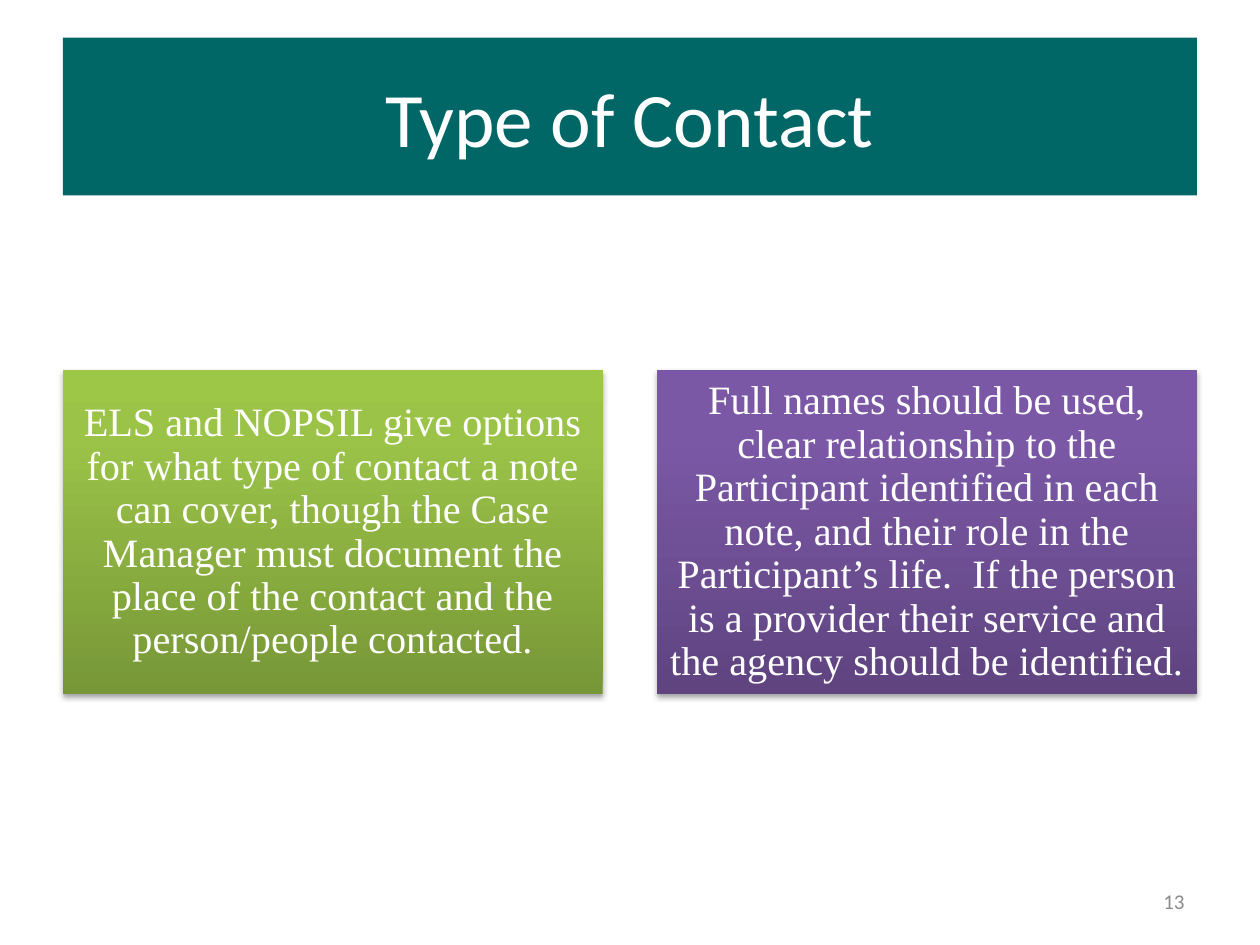
from copy import deepcopy
from dataclasses import dataclass

from lxml import etree
from pptx import Presentation
from pptx.dml.color import RGBColor
from pptx.enum.shapes import MSO_SHAPE
from pptx.enum.text import MSO_ANCHOR, PP_ALIGN
from pptx.oxml.ns import qn
from pptx.util import Cm, Pt

RECTANGLE = MSO_SHAPE.RECTANGLE
MIDDLE = MSO_ANCHOR.MIDDLE
CENTER = PP_ALIGN.CENTER
RIGHT = PP_ALIGN.RIGHT


@dataclass(frozen=True)
class Theme:
    heading_font: str = "Calibri"
    body_font: str = "Times New Roman"
    title_size: int = 44
    body_size: int = 23
    number_size: int = 12
    white: str = "FFFFFF"
    teal: str = "006666"
    grey: str = "8C8C8C"
    green: tuple = ("779737", "9BC348", "9DC746")
    purple: tuple = ("5F4480", "7B58A6", "7C57A8")
    stops: tuple = (0, 0.8, 1)


THEME = Theme()

PANELS = (
    (
        "ELS and NOPSIL give options for what type of contact a note can cover, "
        "though the Case Manager must document the place of the contact and the "
        "person/people contacted.",
        THEME.green,
    ),
    (
        "Full names should be used, clear relationship to the Participant "
        "identified in each note, and their role in the Participant’s life.  "
        "If the person is a provider their service and the agency should be "
        "identified.",
        THEME.purple,
    ),
)


def write_text(shape, text, font_name, size, color, alignment):
    frame = shape.text_frame
    frame.word_wrap = True
    frame.vertical_anchor = MIDDLE
    paragraph = frame.paragraphs[0]
    paragraph.text = text
    paragraph.alignment = alignment
    paragraph.font.name = font_name
    paragraph.font.size = Pt(size)
    paragraph.font.color.rgb = RGBColor.from_string(color)
    return frame, paragraph


def add_rectangle(slide, left, top, width, height):
    shape = slide.shapes.add_shape(
        RECTANGLE, Cm(left), Cm(top), Cm(width), Cm(height)
    )
    shape.shadow.inherit = False
    shape.line.fill.background()
    return shape


def fill_gradient(shape, colors):
    shape.fill.gradient()
    shape.fill.gradient_angle = 90
    stop_list = shape.element.spPr.find(qn("a:gradFill")).find(qn("a:gsLst"))
    stop_list.append(deepcopy(stop_list[-1]))
    for stop, position, color in zip(
        shape.fill.gradient_stops, THEME.stops, colors
    ):
        stop.position = position
        stop.color.rgb = RGBColor.from_string(color)


def add_soft_shadow(shape):
    effects = shape.element.spPr.find(qn("a:effectLst"))
    shadow = etree.SubElement(
        effects,
        qn("a:outerShdw"),
        blurRad=str(Pt(3.1)),
        dist=str(Pt(1.8)),
        dir="5400000",
        rotWithShape="0",
    )
    color = etree.SubElement(shadow, qn("a:srgbClr"), val="000000")
    etree.SubElement(color, qn("a:alpha"), val="35000")


def add_title(slide, left, top, width, height):
    banner = add_rectangle(slide, left, top, width, height)
    banner.fill.solid()
    banner.fill.fore_color.rgb = RGBColor.from_string(THEME.teal)
    write_text(
        banner, "Type of Contact", THEME.heading_font,
        THEME.title_size, THEME.white, CENTER,
    )


def add_panels(slide, left, top, width, height, gap=1.1):
    panel_width = (width - gap * (len(PANELS) - 1)) / len(PANELS)
    for index, (text, colors) in enumerate(PANELS):
        panel = add_rectangle(
            slide, left + index * (panel_width + gap), top, panel_width, height
        )
        fill_gradient(panel, colors)
        add_soft_shadow(panel)
        frame, paragraph = write_text(
            panel, text, THEME.body_font, THEME.body_size, THEME.white, CENTER
        )
        frame.margin_left = frame.margin_right = Cm(0.24)
        frame.margin_top = frame.margin_bottom = Cm(0.24)
        paragraph.line_spacing = 0.9


def add_slide_number(slide, left, top, width, height):
    box = slide.shapes.add_textbox(Cm(left), Cm(top), Cm(width), Cm(height))
    write_text(
        box, "13", THEME.heading_font, THEME.number_size, THEME.grey, RIGHT
    )


def main():
    presentation = Presentation()
    presentation.slide_width = Cm(25.4)
    presentation.slide_height = Cm(19.05)
    slide = presentation.slides.add_slide(presentation.slide_layouts[6])
    add_title(slide, 1.27, 0.76, 22.86, 3.18)
    add_panels(slide, 1.27, 7.46, 22.86, 6.54)
    add_slide_number(slide, 18.2, 17.66, 5.93, 1.01)
    presentation.save("out.pptx")


if __name__ == "__main__":
    main()
